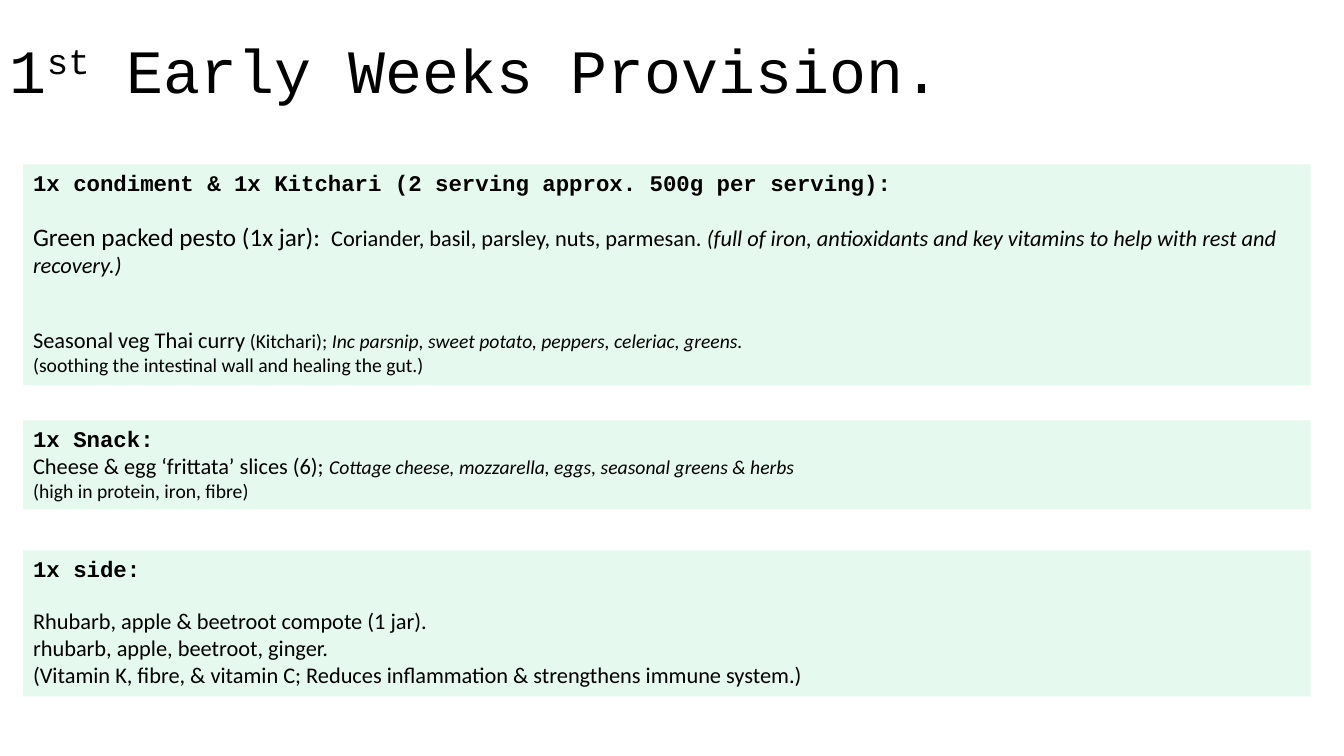
import pptx
import pptx.dml.color
import pptx.enum.shapes
import pptx.enum.text
import pptx.oxml.ns
import pptx.util
from lxml import etree

Inches = pptx.util.Inches
Pt = pptx.util.Pt

THEME = {
    "ink": pptx.dml.color.RGBColor.from_string("000000"),
    "panel": pptx.dml.color.RGBColor.from_string("00CC66"),
    "panel_alpha": "10000",
    "superscript": "30000",
}
HEADING = {"name": "Courier New", "size": Pt(16), "bold": True}
LEAD = {"name": "Calibri", "size": Pt(18)}
BODY = {"name": "Calibri", "size": Pt(16)}
SMALL = {"name": "Calibri", "size": Pt(14)}
TITLE = {"name": "Courier New", "size": Pt(44)}
BODY_ITALIC = {**BODY, "italic": True}
SMALL_ITALIC = {**SMALL, "italic": True}

TITLE_BOX = (0, 0, 11.5, 1.45)
TITLE_PARTS = [("1", False), ("st", True), (" Early Weeks Provision.", False)]

# Each panel: top, height, and lines of (space before in points, spans)
PANEL_LEFT, PANEL_WIDTH = 0.23, 12.77
PANELS = [
    (1.63, 2.19, [
        (0, [("1x condiment & 1x Kitchari (2 serving approx. 500g per serving):", HEADING)]),
        (18, [("Green packed pesto (1x jar): ", LEAD),
              (" Coriander, basil, parsley, nuts, parmesan. ", BODY),
              ("(full of iron, antioxidants and key vitamins to help with rest and recovery.)",
               BODY_ITALIC)]),
        (34, [("Seasonal veg Thai curry", BODY),
              (" (Kitchari); ", SMALL),
              ("Inc parsnip, sweet potato, peppers, celeriac, greens.", SMALL_ITALIC)]),
        (0, [("(soothing the intestinal wall and healing the gut.)", SMALL)]),
    ]),
    (4.17, 0.88, [
        (0, [("1x Snack:", HEADING)]),
        (0, [("Cheese & egg ‘frittata’ slices (6); ", BODY),
             ("Cottage cheese, mozzarella, eggs, seasonal greens & herbs", SMALL_ITALIC)]),
        (0, [("(high in protein, iron, fibre)", SMALL)]),
    ]),
    (5.46, 1.45, [
        (0, [("1x side:", HEADING)]),
        (18, [("Rhubarb, apple & beetroot compote (1 jar).", BODY)]),
        (0, [("rhubarb, apple, beetroot, ginger.", BODY)]),
        (0, [("(Vitamin K, fibre, & vitamin C; Reduces inflammation & strengthens immune system.)",
              BODY)]),
    ]),
]


def add_span(para, text, style):
    span = para.add_run()
    span.text = text
    for key, value in style.items():
        setattr(span.font, key, value)
    span.font.color.rgb = THEME["ink"]
    return span


def add_title(page):
    box = page.shapes.add_textbox(*map(Inches, TITLE_BOX))
    box.text_frame.word_wrap = True
    box.text_frame.vertical_anchor = pptx.enum.text.MSO_ANCHOR.MIDDLE
    para = box.text_frame.paragraphs[0]
    para.line_spacing = 0.9
    for text, raised in TITLE_PARTS:
        span = add_span(para, text, TITLE)
        if raised:
            span._r.get_or_add_rPr().set("baseline", THEME["superscript"])


def add_panel(page, top, height, lines):
    box = page.shapes.add_shape(
        pptx.enum.shapes.MSO_SHAPE.RECTANGLE,
        Inches(PANEL_LEFT), Inches(top), Inches(PANEL_WIDTH), Inches(height))
    box.shadow.inherit = False
    box.line.fill.background()
    box.fill.solid()
    box.fill.fore_color.rgb = THEME["panel"]
    qn = pptx.oxml.ns.qn
    colour = box._element.spPr.find(qn("a:solidFill")).find(qn("a:srgbClr"))
    etree.SubElement(colour, qn("a:alpha")).set("val", THEME["panel_alpha"])

    frame = box.text_frame
    frame.word_wrap = True
    frame.auto_size = pptx.enum.text.MSO_AUTO_SIZE.SHAPE_TO_FIT_TEXT
    frame.vertical_anchor = pptx.enum.text.MSO_ANCHOR.TOP
    for index, (gap, spans) in enumerate(lines):
        para = frame.add_paragraph() if index else frame.paragraphs[0]
        para.alignment = pptx.enum.text.PP_ALIGN.LEFT
        para.space_before = Pt(gap)
        for text, style in spans:
            add_span(para, text, style)


def main():
    deck = pptx.Presentation()
    deck.slide_width, deck.slide_height = Inches(13.33), Inches(7.5)
    page = deck.slides.add_slide(deck.slide_layouts[6])
    add_title(page)
    for top, height, lines in PANELS:
        add_panel(page, top, height, lines)
    deck.save("out.pptx")


if __name__ == "__main__":
    main()
